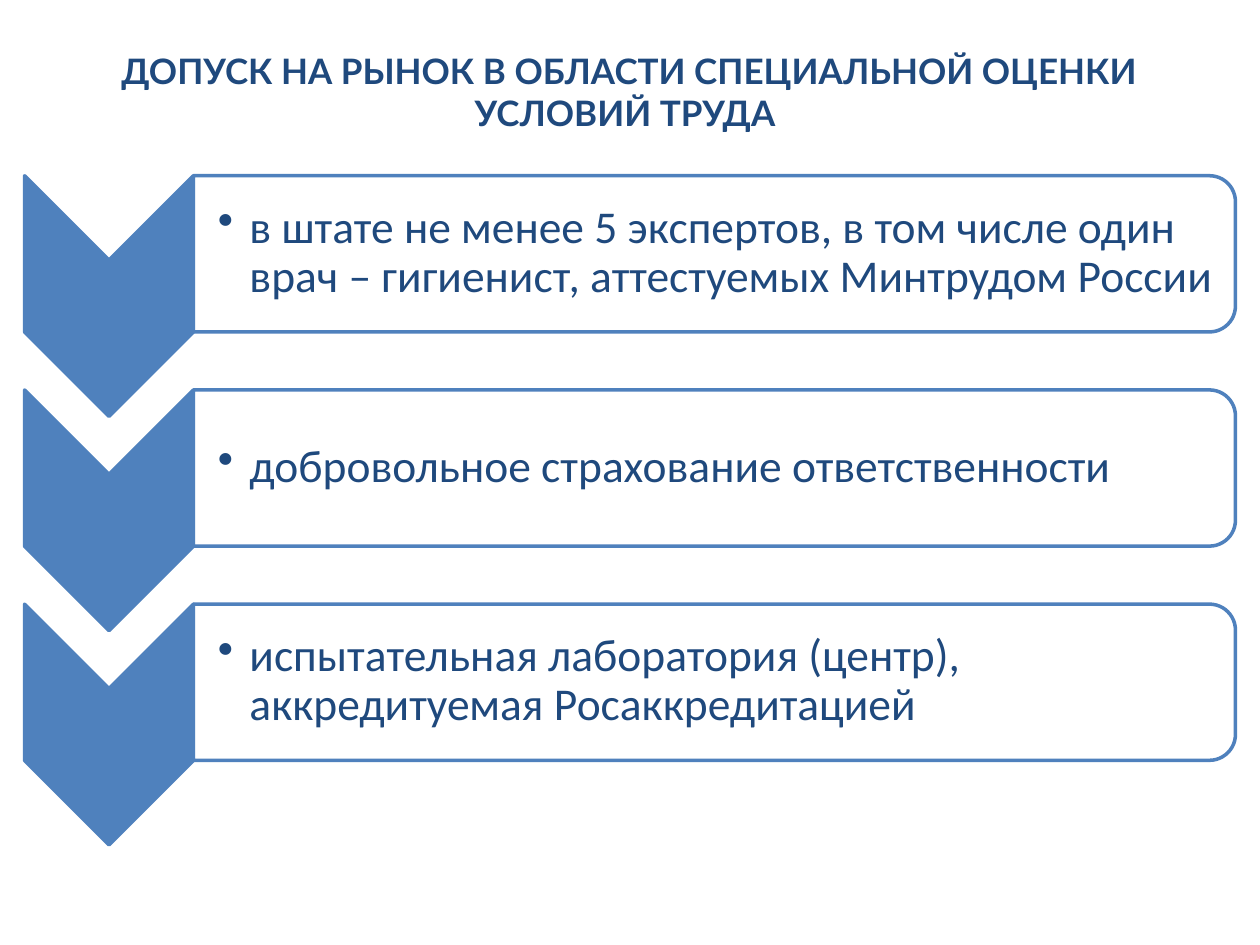
import pptx
import pptx.util
import pptx.dml.color
import pptx.enum.shapes
import pptx.enum.text
import pptx.oxml
import pptx.oxml.ns
import lxml.etree

Inches = pptx.util.Inches
Pt = pptx.util.Pt
SHAPES = pptx.enum.shapes.MSO_SHAPE
MIDDLE = pptx.enum.text.MSO_ANCHOR.MIDDLE
qn = pptx.oxml.ns.qn

COLORS = {"navy": "1F497D", "blue": "4F81BD", "white": "FFFFFF"}
REQUIREMENTS = [
    "в штате не менее 5 экспертов, в том числе один врач – гигиенист, аттестуемых Минтрудом России",
    "добровольное страхование ответственности",
    "испытательная лаборатория (центр), аккредитуемая Росаккредитацией",
]
ROW_STEP = 1.7


def add_rotated(kind, left, top, width, height, fill):
    shape = slide.shapes.add_shape(kind, Inches(left), Inches(top), Inches(width), Inches(height))
    shape.rotation = 90
    shape.shadow.inherit = False
    shape.fill.solid()
    shape.fill.fore_color.rgb = pptx.dml.color.RGBColor.from_string(COLORS[fill])
    shape.line.color.rgb = pptx.dml.color.RGBColor.from_string(COLORS["blue"])
    shape.line.width = Pt(2)
    return shape


def add_text(paragraph, text, font, size, bold):
    run = paragraph.add_run()
    run.text = text
    run.font.name = font
    run.font.size = Pt(size)
    run.font.bold = bold
    run.font.color.rgb = pptx.dml.color.RGBColor.from_string(COLORS["navy"])


deck = pptx.Presentation()
deck.slide_width = Inches(10)
deck.slide_height = Inches(7.5)
slide = deck.slides.add_slide(deck.slide_layouts[5])

heading = slide.shapes.title
heading.left, heading.top = Inches(0.27), Inches(0.21)
heading.width, heading.height = Inches(9.45), Inches(1.04)
heading.text_frame.vertical_anchor = MIDDLE
heading_line = heading.text_frame.paragraphs[0]
heading_line.alignment = pptx.enum.text.PP_ALIGN.CENTER
add_text(heading_line, "ДОПУСК НА РЫНОК В ОБЛАСТИ СПЕЦИАЛЬНОЙ ОЦЕНКИ УСЛОВИЙ ТРУДА ", "Lato", 20, True)

for row, requirement in enumerate(REQUIREMENTS):
    offset = row * ROW_STEP
    add_rotated(SHAPES.CHEVRON, -0.09, 1.68 + offset, 1.91, 1.34, "blue")
    panel = add_rotated(SHAPES.ROUND_2_SAME_RECTANGLE, 5.05, -2.12 + offset, 1.24, 8.27, "white")
    panel_color = panel.fill._xPr.find(qn("a:solidFill"))[0]
    lxml.etree.SubElement(panel_color, qn("a:alpha")).set("val", "90000")

    label = slide.shapes.add_textbox(Inches(1.53), Inches(1.45 + offset), Inches(8.21), Inches(1.12))
    frame = label.text_frame
    frame.word_wrap = True
    frame.vertical_anchor = MIDDLE
    frame.margin_left = Inches(0.2)
    frame.margin_top = frame.margin_right = frame.margin_bottom = Inches(0.02)
    item = frame.paragraphs[0]
    item.level = 1
    item.line_spacing = 0.9
    item.space_after = Pt(4)
    add_text(item, requirement, "Calibri", 26, False)
    item_format = item._p.get_or_add_pPr()
    item_format.set("marL", str(Inches(0.25)))
    item_format.set("indent", str(-Inches(0.25)))
    lxml.etree.SubElement(item_format, qn("a:buChar")).set("char", "•")

deck.save("out.pptx")
